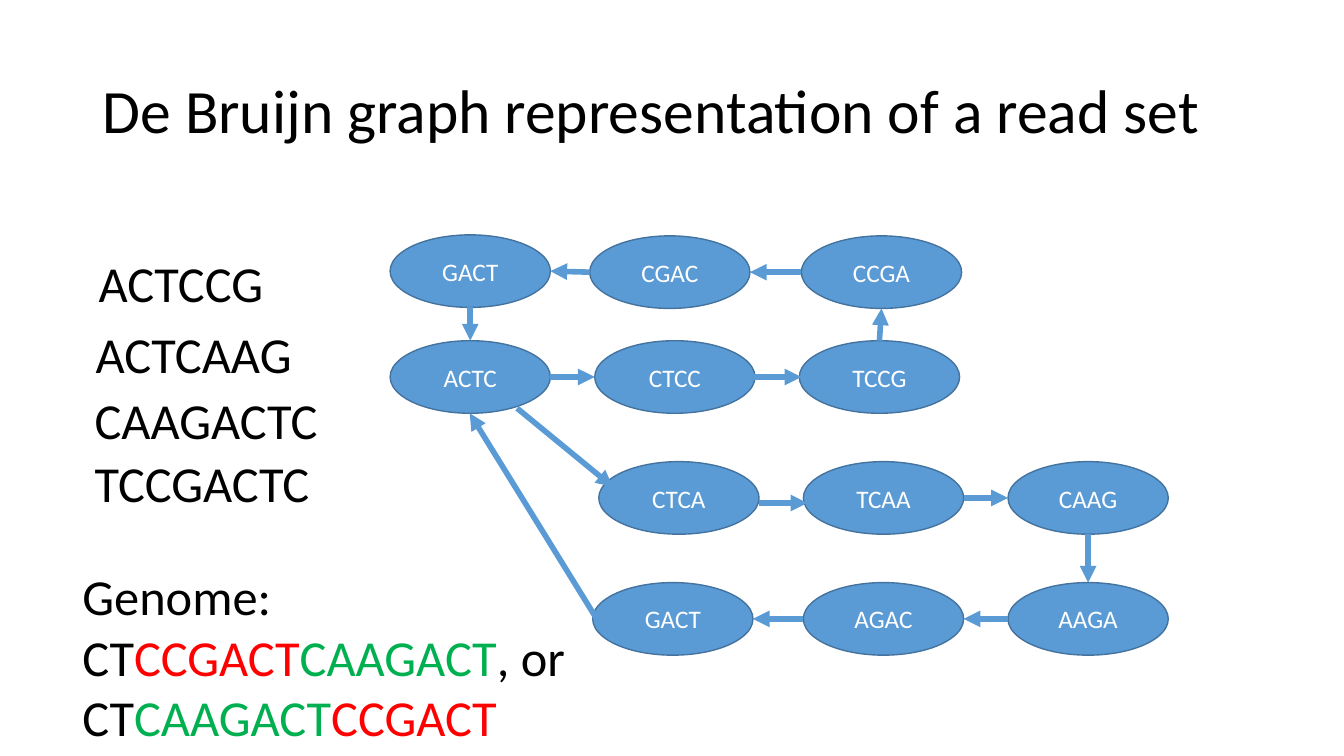
import pptx
import pptx.util
import pptx.dml.color
import pptx.enum.shapes
import pptx.enum.text
import pptx.oxml

# Content: lengths in px, 100 px to the inch
PX = 9144
FONT = "Calibri"
COLORS = {
    "text": "000000",
    "red": "FF0000",
    "green": "00B050",
    "node": "5B9BD5",
    "edge": "43739E",
    "label": "FFFFFF",
}
TITLE = "De Bruijn graph representation of a read set"
READS = [  # text, left, top, width, height
    ("ACTCCG", 88, 245, 265, 71),
    ("ACTCAAG", 85, 316, 254, 101),
    ("CAAGACTC", 84, 381, 259, 71),
    ("TCCGACTC", 84, 444, 259, 71),
]
GENOMES = [
    [("Genome: CT", "text"), ("CCGACT", "red"), ("CAAGACT", "green"), (", or", "text")],
    [("CT", "text"), ("CAAGACT", "green"), ("CCGACT", "red")],
]
NODE_SIZE = (159, 72)
NODES = {  # name: k-mer, left, top
    "actc": ("ACTC", 387, 338),
    "ctcc": ("CTCC", 590, 338),
    "tccg": ("TCCG", 793, 338),
    "ccga": ("CCGA", 795, 234),
    "cgac": ("CGAC", 585, 234),
    "gact upper": ("GACT", 387, 233),
    "ctca": ("CTCA", 594, 458),
    "tcaa": ("TCAA", 797, 458),
    "caag": ("CAAG", 1000, 458),
    "aaga": ("AAGA", 1000, 578),
    "agac": ("AGAC", 797, 578),
    "gact lower": ("GACT", 588, 578),
}
LINKS = [  # node, side, node, side
    ("actc", "right", "ctcc", "left"),
    ("tccg", "top", "ccga", "bottom"),
    ("ccga", "left", "cgac", "right"),
    ("cgac", "left", "gact upper", "right"),
    ("gact upper", "bottom", "actc", "top"),
    ("tcaa", "right", "caag", "left"),
    ("caag", "bottom", "aaga", "top"),
    ("aaga", "left", "agac", "right"),
    ("agac", "left", "gact lower", "right"),
]
LOOSE_ARROWS = [  # start and end points that sit off the side middles
    ((747, 374), (795, 374)),
    ((753, 499), (801, 499)),
    ((513, 405), (608, 483)),
    ((592, 614), (466, 410)),
]
SIDES = {"top": (0.5, 0), "left": (0, 0.5), "bottom": (0.5, 1), "right": (1, 0.5)}


def px(*lengths):
    return [pptx.util.Emu(round(length * PX)) for length in lengths]


def color(name):
    return pptx.dml.color.RGBColor.from_string(COLORS[name])


def set_font(font, size, name):
    font.name = FONT
    font.size = pptx.util.Pt(size)
    font.color.rgb = color(name)


def add_text(page, place, lines, size):
    frame = page.shapes.add_textbox(*px(*place)).text_frame
    frame.word_wrap = True
    for index, spans in enumerate(lines):
        para = frame.add_paragraph() if index else frame.paragraphs[0]
        set_font(para.font, size, "text")
        for text, name in spans:
            span = para.add_run()
            span.text = text
            set_font(span.font, size, name)
    return frame


def add_node(page, text, left, top):
    node = page.shapes.add_shape(
        pptx.enum.shapes.MSO_SHAPE.OVAL, *px(left, top, *NODE_SIZE))
    node.shadow.inherit = False
    node.fill.solid()
    node.fill.fore_color.rgb = color("node")
    node.line.color.rgb = color("edge")
    node.line.width = pptx.util.Pt(1)
    frame = node.text_frame
    frame.vertical_anchor = pptx.enum.text.MSO_ANCHOR.MIDDLE
    para = frame.paragraphs[0]
    para.text = text
    para.alignment = pptx.enum.text.PP_ALIGN.CENTER
    set_font(para.font, 18, "label")


def side_point(name, side):
    text, left, top = NODES[name]
    across, down = SIDES[side]
    return left + across * NODE_SIZE[0], top + down * NODE_SIZE[1]


def add_arrow(page, start, end):
    arrow = page.shapes.add_connector(
        pptx.enum.shapes.MSO_CONNECTOR.STRAIGHT, *px(*start, *end))
    arrow.line.color.rgb = color("node")
    arrow.line.width = pptx.util.Pt(4)
    properties = arrow.line._get_or_add_ln()
    namespace = pptx.oxml.ns.nsdecls("a")
    properties.append(pptx.oxml.parse_xml(f'<a:tailEnd {namespace} type="triangle"/>'))
    properties.getparent().append(pptx.oxml.parse_xml(f"<a:effectLst {namespace}/>"))


def main():
    deck = pptx.Presentation()
    deck.slide_width, deck.slide_height = px(1333.33, 750)
    page = deck.slides.add_slide(deck.slide_layouts[6])

    # Title
    title = add_text(page, (92, 40, 1150, 145), [[(TITLE, "text")]], 44)
    title.vertical_anchor = pptx.enum.text.MSO_ANCHOR.MIDDLE
    title.paragraphs[0].line_spacing = 0.9

    # Reads and genomes
    for text, *place in READS:
        add_text(page, place, [[(text, "text")]], 36)
    add_text(page, (72, 556, 614, 192), GENOMES, 36)

    # Graph
    for node in NODES.values():
        add_node(page, *node)
    for source, source_side, target, target_side in LINKS:
        add_arrow(page, side_point(source, source_side), side_point(target, target_side))
    for start, end in LOOSE_ARROWS:
        add_arrow(page, start, end)

    deck.save("out.pptx")


if __name__ == "__main__":
    main()
